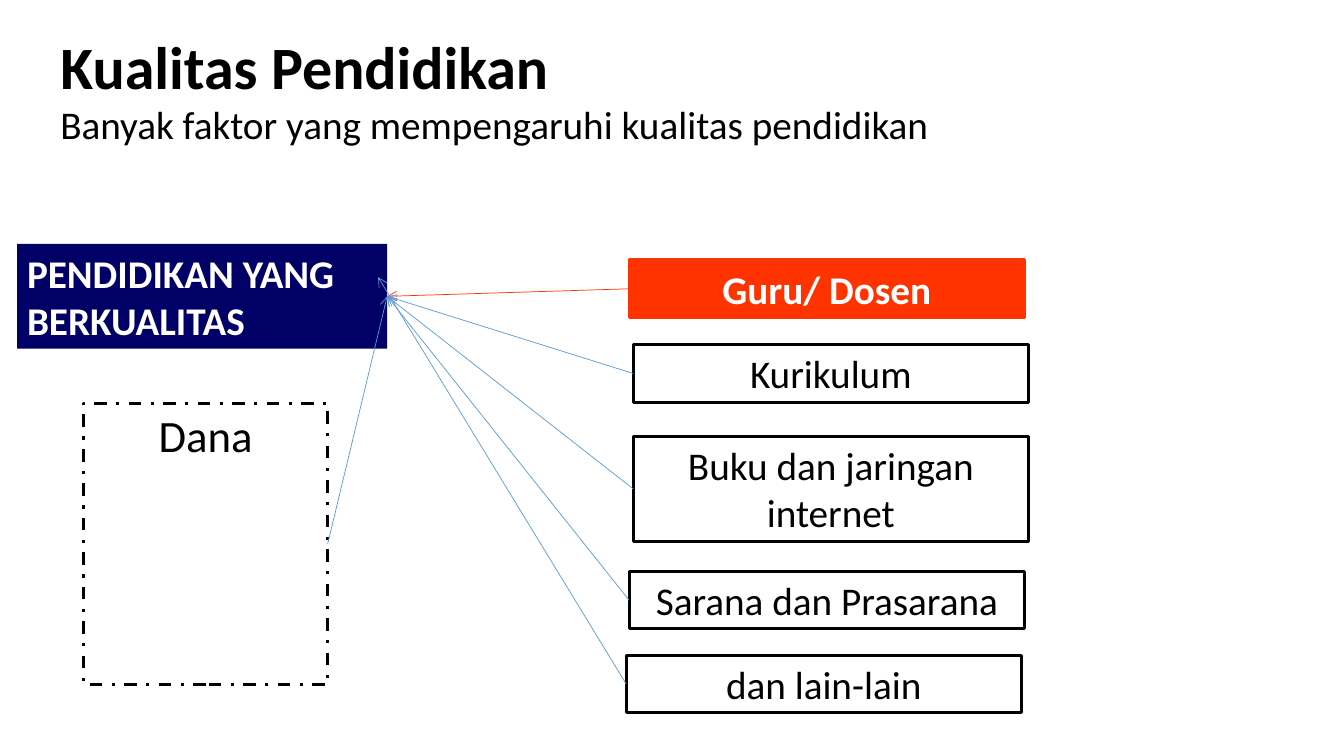
from lxml import etree
from pptx import Presentation
from pptx.dml.color import RGBColor
from pptx.enum.dml import MSO_LINE
from pptx.enum.shapes import MSO_CONNECTOR, MSO_SHAPE
from pptx.enum.text import MSO_ANCHOR, MSO_AUTO_SIZE, PP_ALIGN
from pptx.oxml.ns import qn
from pptx.util import Inches, Pt

BLACK = RGBColor(0x00, 0x00, 0x00)
WHITE = RGBColor(0xFF, 0xFF, 0xFF)
NAVY = RGBColor(0x00, 0x00, 0x66)
ORANGE = RGBColor(0xFF, 0x33, 0x00)
BLUE = RGBColor(0x5B, 0x9B, 0xD5)

FONT = "Calibri"
LEFT, CENTER = PP_ALIGN.LEFT, PP_ALIGN.CENTER
TOP, MIDDLE = MSO_ANCHOR.TOP, MSO_ANCHOR.MIDDLE
NO_AUTOFIT = MSO_AUTO_SIZE.NONE
RECTANGLE = MSO_SHAPE.RECTANGLE
STRAIGHT = MSO_CONNECTOR.STRAIGHT
DASH_DOT = MSO_LINE.DASH_DOT
LEFT_SIDE, RIGHT_SIDE = 1, 3

TITLE_ONLY = 5
FACTOR_WIDTH = 3.92
ONE_LINE, TWO_LINES = 0.57, 1.04

# text, left, top, height
OTHER_FACTORS = [
    ("Kurikulum", 6.28, 3.42, ONE_LINE),
    ("Buku dan jaringan internet", 6.28, 4.33, TWO_LINES),
    ("Sarana dan Prasarana", 6.24, 5.67, ONE_LINE),
]


def write(shape, text, size, color=BLACK, bold=False, align=LEFT, anchor=TOP):
    frame = shape.text_frame
    frame.word_wrap = True
    frame.auto_size = NO_AUTOFIT
    frame.vertical_anchor = anchor
    para = frame.paragraphs[0]
    para.alignment = align
    span = para.add_run()
    span.text = text
    span.font.name = FONT
    span.font.size = Pt(size)
    span.font.bold = bold
    span.font.color.rgb = color
    return para


def add_headings(page):
    title = page.shapes.title
    title.left, title.top = Inches(0.5), Inches(0.3)
    title.width, title.height = Inches(9), Inches(0.78)
    para = write(title, "Kualitas Pendidikan", 42.9, bold=True, anchor=MIDDLE)
    para.line_spacing = 0.9

    subtitle = page.shapes.add_textbox(Inches(0.5), Inches(1), Inches(9), Inches(0.92))
    para = write(subtitle, "Banyak faktor yang mempengaruhi kualitas pendidikan", 28)
    para.line_spacing = 0.9
    para.space_before = Pt(10)


def add_box(page, text, left, top, width, height, size=28, color=BLACK,
            bold=False, align=CENTER, fill=None, line=BLACK, dash=None):
    box = page.shapes.add_shape(
        RECTANGLE, Inches(left), Inches(top), Inches(width), Inches(height))
    box.shadow.inherit = False
    if fill is None:
        box.fill.background()
    else:
        box.fill.solid()
        box.fill.fore_color.rgb = fill
    if line is None:
        box.line.fill.background()
    else:
        box.line.color.rgb = line
        box.line.width = Pt(2.25)
        if dash is not None:
            box.line.dash_style = dash
    write(box, text, size, color, bold, align)
    return box


def add_arrow(page, source, side, color=BLUE, target=None, tip=(0, 0)):
    """Draw an arrow from a side of source to the target's right side, or to tip."""
    tip_x, tip_y = (Inches(value) for value in tip)
    arrow = page.shapes.add_connector(STRAIGHT, 0, 0, tip_x, tip_y)
    arrow.begin_connect(source, side)
    if target is not None:
        arrow.end_connect(target, RIGHT_SIDE)
    arrow.line.color.rgb = color
    arrow.line.width = Pt(0.5)
    etree.SubElement(arrow.line._get_or_add_ln(), qn("a:tailEnd"), type="arrow")
    etree.SubElement(arrow._element.spPr, qn("a:effectLst"))


def main():
    deck = Presentation()
    deck.slide_width, deck.slide_height = Inches(13.33), Inches(7.5)
    page = deck.slides.add_slide(deck.slide_layouts[TITLE_ONLY])
    add_headings(page)

    funds = add_box(page, "Dana", 0.83, 4, 2.42, 2.79, size=32, dash=DASH_DOT)
    teachers = add_box(page, "Guru/ Dosen", 6.24, 2.58, FACTOR_WIDTH, ONE_LINE,
                       color=WHITE, bold=True, fill=ORANGE, line=ORANGE)
    factors = [add_box(page, text, left, top, FACTOR_WIDTH, height)
               for text, left, top, height in OTHER_FACTORS]
    others = add_box(page, "dan lain-lain", 6.21, 6.5, FACTOR_WIDTH, ONE_LINE)
    quality = add_box(page, "PENDIDIKAN YANG BERKUALITAS", 0.17, 2.42, 3.67, TWO_LINES,
                      color=WHITE, bold=True, align=LEFT, fill=NAVY, line=None)

    add_arrow(page, teachers, LEFT_SIDE, ORANGE, target=quality)
    for factor in factors:
        add_arrow(page, factor, LEFT_SIDE, target=quality)
    add_arrow(page, others, LEFT_SIDE, tip=(3.75, 2.75))
    add_arrow(page, funds, RIGHT_SIDE, target=quality)

    deck.save("out.pptx")


if __name__ == "__main__":
    main()
